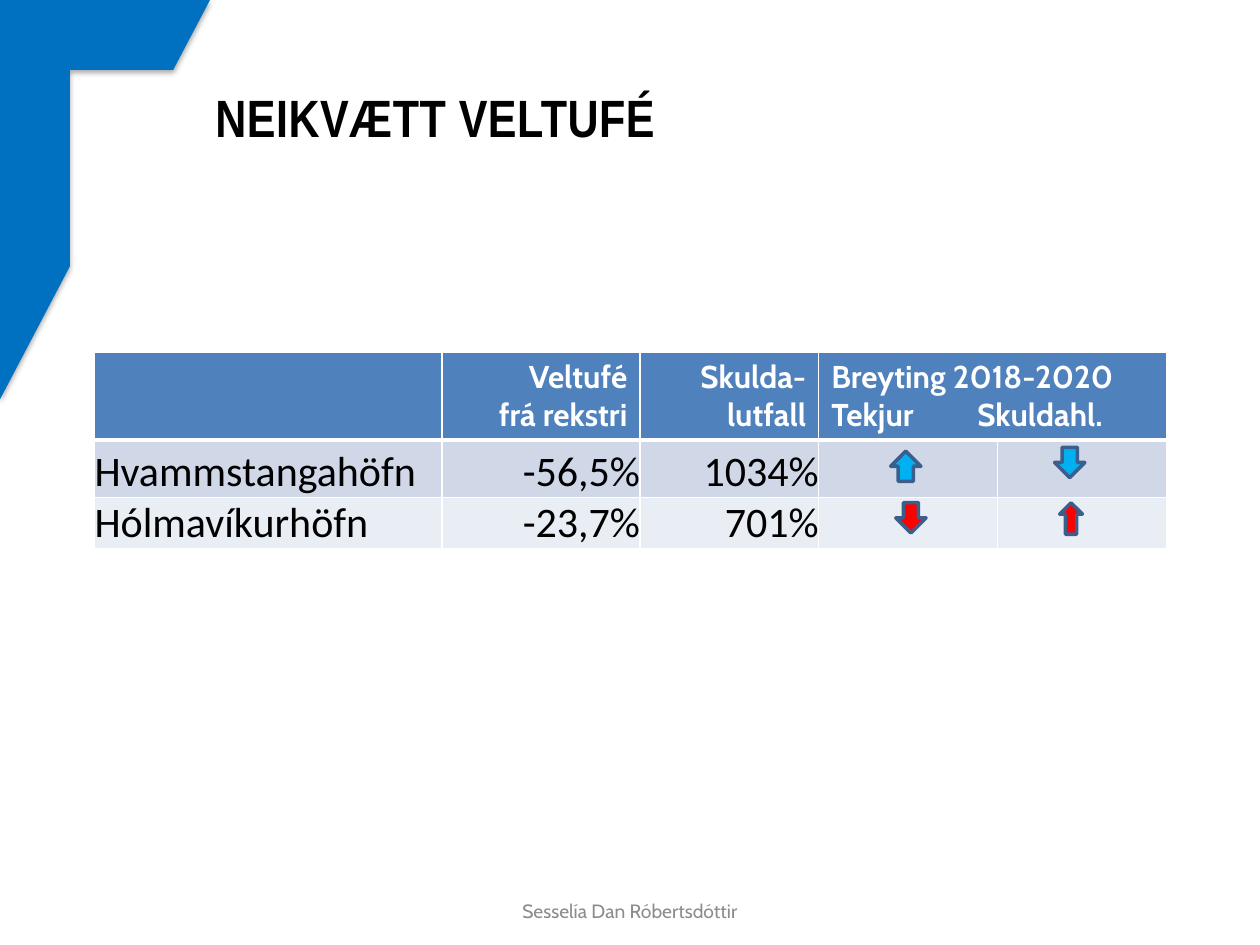
from dataclasses import dataclass

from lxml import etree
from pptx import Presentation
from pptx.dml.color import RGBColor
from pptx.enum.shapes import MSO_SHAPE
from pptx.enum.text import MSO_ANCHOR, PP_ALIGN
from pptx.oxml.ns import qn
from pptx.util import Pt

UP, DOWN = MSO_SHAPE.UP_ARROW, MSO_SHAPE.DOWN_ARROW
HALF_FRAME = MSO_SHAPE.HALF_FRAME
LEFT, CENTER, RIGHT = PP_ALIGN.LEFT, PP_ALIGN.CENTER, PP_ALIGN.RIGHT
TOP, MIDDLE, BOTTOM = MSO_ANCHOR.TOP, MSO_ANCHOR.MIDDLE, MSO_ANCHOR.BOTTOM

WHITE, BLACK, GREY = "FFFFFF", "000000", "8C8C8C"
FRAME_BLUE, HEADER_BLUE = "0070C0", "4F81BD"
GOOD, BAD, ARROW_EDGE = "00B0F0", "FF0000", "3A5F8C"
COLUMN_WIDTHS = (198.7, 113, 102.2, 102.2, 96.5)
SECOND_TAB = 83.4


@dataclass(frozen=True)
class TextStyle:
    face: str
    size: float
    color: str
    bold: bool = False


@dataclass(frozen=True)
class TableRow:
    height: float
    fill: str
    texts: tuple
    style: TextStyle
    anchor: MSO_ANCHOR
    alignments: tuple
    bottom_border: float = 1
    inset: bool = False


@dataclass(frozen=True)
class TrendArrow:
    shape: MSO_SHAPE
    left: float
    top: float
    width: float
    height: float
    color: str
    rotation: float = 0


TITLE = TextStyle("Arial Narrow", 30, BLACK, True)
FOOTER = TextStyle("Cabin", 11, GREY)
HEADER = TextStyle("Cabin", 18, WHITE, True)
BODY = TextStyle("Calibri", 24, BLACK)

BODY_ALIGNMENTS = (LEFT, RIGHT, RIGHT, LEFT, LEFT)
ROWS = (
    TableRow(50.5, HEADER_BLUE,
             ("", "Veltufé\nfrá rekstri", "Skulda-lutfall",
              "Breyting 2018-2020\nTekjur\tSkuldahl.", ""),
             HEADER, TOP, BODY_ALIGNMENTS, bottom_border=3, inset=True),
    TableRow(32.8, "D0D8E8", ("Hvammstangahöfn", "-56,5%", "1034%", "", ""),
             BODY, BOTTOM, BODY_ALIGNMENTS),
    TableRow(29.3, "E9EDF4", ("Hólmavíkurhöfn", "-23,7%", "701%", "", ""),
             BODY, BOTTOM, BODY_ALIGNMENTS),
)
ARROWS = (
    TrendArrow(DOWN, 511.9, 287.3, 17.3, 17.3, BAD),
    TrendArrow(UP, 605.5, 287.3, 13, 18, BAD),
    TrendArrow(UP, 509, 257.8, 17.3, 17.3, GOOD),
    TrendArrow(UP, 602.6, 255.6, 17.3, 17.3, GOOD, 180),
)


def paint(target, color: str) -> None:
    target.solid()
    target.fore_color.rgb = RGBColor.from_string(color)


def style_paragraph(paragraph, style: TextStyle, alignment) -> None:
    paragraph.alignment = alignment
    paragraph.font.name = style.face
    paragraph.font.size = Pt(style.size)
    paragraph.font.bold = style.bold
    paint(paragraph.font.fill, style.color)


def add_corner_frame(slide) -> None:
    frame = slide.shapes.add_shape(HALF_FRAME, 0, 0, Pt(120), Pt(228.2))
    paint(frame.fill, FRAME_BLUE)
    frame.line.fill.background()
    frame.shadow.inherit = False
    effects = frame._element.spPr.find(qn("a:effectLst"))
    shadow = etree.SubElement(effects, qn("a:outerShdw"), blurRad=str(Pt(3.1)),
                              dist=str(Pt(1.8)), dir="5400000", rotWithShape="0")
    tint = etree.SubElement(shadow, qn("a:srgbClr"), val=BLACK)
    etree.SubElement(tint, qn("a:alpha"), val="35000")


def add_label(slide, text: str, left: float, top: float, width: float,
              height: float, style: TextStyle, alignment):
    frame = slide.shapes.add_textbox(
        Pt(left), Pt(top), Pt(width), Pt(height)).text_frame
    frame.word_wrap = True
    frame.vertical_anchor = MIDDLE
    frame.text = text
    style_paragraph(frame.paragraphs[0], style, alignment)
    return frame.paragraphs[0]


def add_borders(cell, bottom: float) -> None:
    properties = cell._tc.get_or_add_tcPr()
    for side, width in (("L", 1), ("R", 1), ("T", 1), ("B", bottom)):
        border = etree.SubElement(properties, qn(f"a:ln{side}"), w=str(Pt(width)))
        fill = etree.SubElement(border, qn("a:solidFill"))
        etree.SubElement(fill, qn("a:srgbClr"), val=WHITE)


def add_tab_stop(paragraph, position: float) -> None:
    tabs = etree.SubElement(paragraph._p.get_or_add_pPr(), qn("a:tabLst"))
    etree.SubElement(tabs, qn("a:tab"), pos=str(Pt(position)), algn="l")


def fill_cell(cell, text: str, alignment, row: TableRow) -> None:
    add_borders(cell, row.bottom_border)
    paint(cell.fill, row.fill)
    if not text:
        return
    cell.text = text
    cell.vertical_anchor = row.anchor
    if not row.inset:
        cell.margin_left = cell.margin_right = 0
        cell.margin_top = cell.margin_bottom = 0
    for paragraph in cell.text_frame.paragraphs:
        if "\t" in paragraph.text:
            add_tab_stop(paragraph, SECOND_TAB)
        style_paragraph(paragraph, row.style, alignment)


def add_harbour_table(slide) -> None:
    table = slide.shapes.add_table(
        len(ROWS), len(COLUMN_WIDTHS), Pt(54), Pt(201),
        Pt(sum(COLUMN_WIDTHS)), Pt(sum(row.height for row in ROWS))).table
    table.horz_banding = False
    for column, width in zip(table.columns, COLUMN_WIDTHS):
        column.width = Pt(width)
    for row_index, row in enumerate(ROWS):
        table.rows[row_index].height = Pt(row.height)
        for column_index, text in enumerate(row.texts):
            fill_cell(table.cell(row_index, column_index), text,
                      row.alignments[column_index], row)
    table.cell(0, 3).merge(table.cell(0, 4))


def add_trend_arrow(slide, trend: TrendArrow) -> None:
    arrow = slide.shapes.add_shape(trend.shape, Pt(trend.left), Pt(trend.top),
                                   Pt(trend.width), Pt(trend.height))
    arrow.rotation = trend.rotation
    arrow.shadow.inherit = False
    paint(arrow.fill, trend.color)
    paint(arrow.line.fill, ARROW_EDGE)
    arrow.line.width = Pt(2)


def main() -> None:
    presentation = Presentation()
    presentation.slide_width, presentation.slide_height = Pt(720), Pt(540)
    slide = presentation.slides.add_slide(presentation.slide_layouts[6])
    paint(slide.background.fill, WHITE)
    add_corner_frame(slide)
    title = add_label(slide, "NEIKVÆTT VELTUFÉ", 116, 21.6, 581, 90, TITLE, LEFT)
    title.runs[0]._r.get_or_add_rPr().set("spc", "30")
    add_label(slide, "Sesselía Dan Róbertsdóttir", 246, 509, 228, 23, FOOTER, CENTER)
    add_harbour_table(slide)
    for trend in ARROWS:
        add_trend_arrow(slide, trend)
    presentation.save("out.pptx")


if __name__ == "__main__":
    main()
